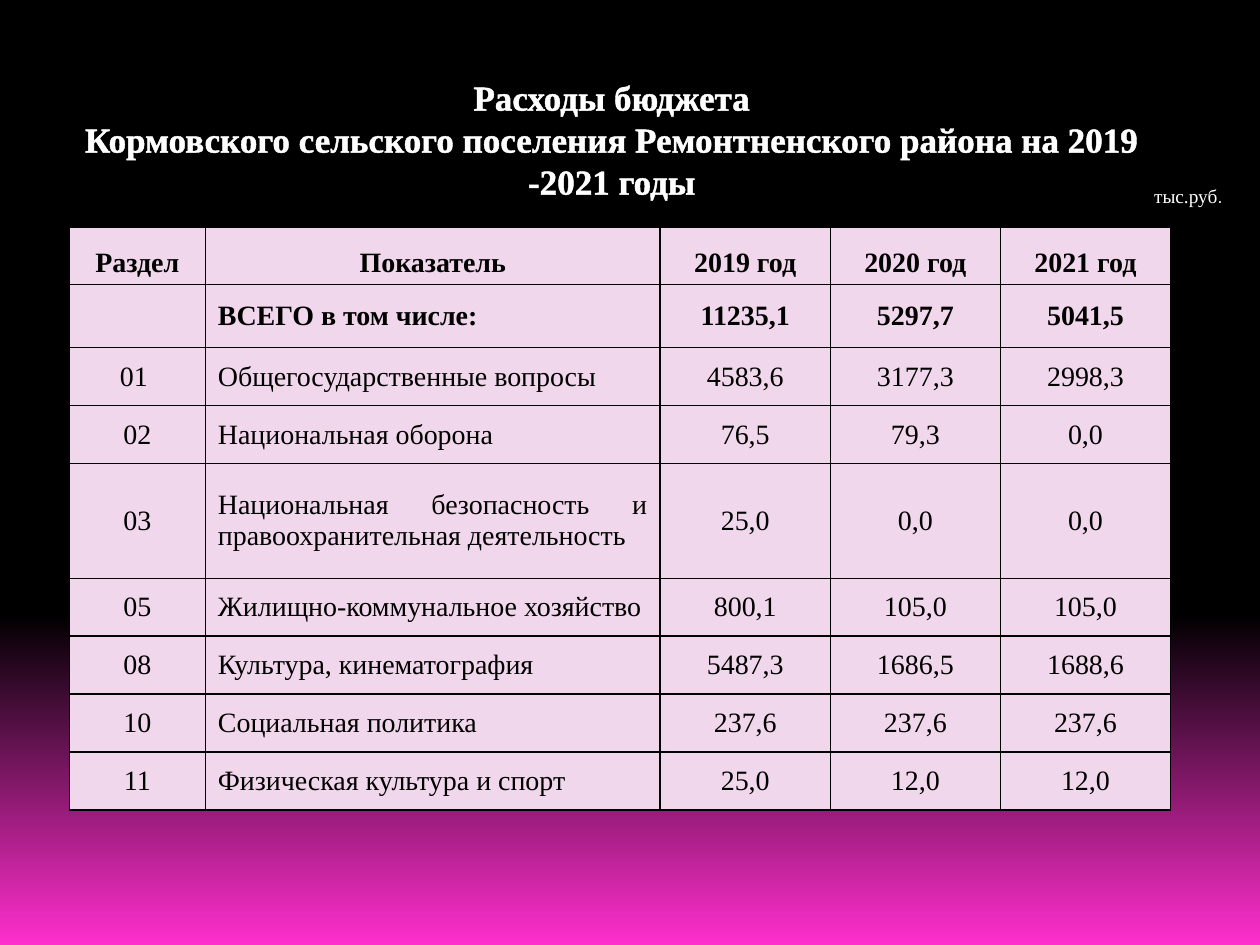
import copy
from dataclasses import dataclass

import pptx
import pptx.dml.color
import pptx.enum.text
import pptx.oxml
import pptx.oxml.ns
import pptx.util
from pptx.util import Inches

ALIGN = pptx.enum.text.PP_ALIGN
ANCHOR = pptx.enum.text.MSO_ANCHOR
FONT = "Times New Roman"
COLUMNS = (1.08, 3.61, 1.35, 1.35, 1.35)


@dataclass
class BudgetRow:
    section: str
    name: str
    values: tuple[str, str, str]
    height: float = 0.46
    bold: bool = False
    header: bool = False


ROWS = [
    BudgetRow("Раздел", "Показатель", ("2019 год", "2020 год", "2021 год"), bold=True, header=True),
    BudgetRow("", "ВСЕГО в том числе:", ("11235,1", "5297,7", "5041,5"), 0.5, bold=True),
    BudgetRow("01 ", "Общегосударственные вопросы", ("4583,6", "3177,3", "2998,3")),
    BudgetRow("02", "Национальная оборона", ("76,5", "79,3", "0,0")),
    BudgetRow("03", "Национальная безопасность и правоохранительная деятельность",
              ("25,0", "0,0", "0,0"), 0.91),
    BudgetRow("05", "Жилищно-коммунальное хозяйство", ("800,1", "105,0", "105,0")),
    BudgetRow("08", "Культура, кинематография", ("5487,3", "1686,5", "1688,6")),
    BudgetRow("10", "Социальная политика", ("237,6", "237,6", "237,6")),
    BudgetRow("11", "Физическая культура и спорт", ("25,0", "12,0", "12,0")),
]


def rgb(color: str) -> pptx.dml.color.RGBColor:
    return pptx.dml.color.RGBColor.from_string(color)


def line_xml(tag: str, color: str, width: float):
    return pptx.oxml.parse_xml(
        f'<a:{tag} {pptx.oxml.ns.nsdecls("a")} w="{pptx.util.Pt(width)}">'
        f'<a:solidFill><a:srgbClr val="{color}"/></a:solidFill></a:{tag}>')


def set_font(font, size: float, color: str, bold: bool = False, name: str = FONT) -> None:
    font.name, font.size, font.bold = name, pptx.util.Pt(size), bold
    font.color.rgb = rgb(color)


def set_background(s) -> None:
    fill = s.background.fill
    fill.gradient()
    fill.gradient_angle = 270
    first = s.element.find(".//" + pptx.oxml.ns.qn("a:gs"))
    first.addnext(copy.deepcopy(first))
    stops = ((0, "000000"), (0.65, "000000"), (1, "FF2FCD"))
    for stop, (position, color) in zip(fill.gradient_stops, stops):
        stop.position = position
        stop.color.rgb = rgb(color)


def fill_cell(cell, text: str, row: BudgetRow, col: int) -> None:
    for side in ("lnL", "lnR", "lnT", "lnB"):
        cell._tc.get_or_add_tcPr().append(line_xml(side, "000000", 1))
    cell.fill.solid()
    cell.fill.fore_color.rgb = rgb("F1D7EC")
    cell.vertical_anchor = ANCHOR.BOTTOM if row.header else ANCHOR.MIDDLE
    if col >= 2 and not row.header:
        cell.margin_left = cell.margin_right = Inches(0.07)
        cell.margin_top = cell.margin_bottom = 0
    p = cell.text_frame.paragraphs[0]
    p.text = text
    set_font(p.font, 16, "000000", row.bold)
    if col != 1 or row.header:
        p.alignment = ALIGN.CENTER
    else:
        p.alignment = ALIGN.LEFT if row.bold else ALIGN.JUSTIFY


def add_budget_table(s, rows: list[BudgetRow]) -> None:
    table = s.shapes.add_table(len(rows), len(COLUMNS), Inches(0.55), Inches(1.8),
                               Inches(sum(COLUMNS)), Inches(sum(r.height for r in rows))).table
    table.first_row = table.horz_banding = False
    for column, width in zip(table.columns, COLUMNS):
        column.width = Inches(width)
    for i, row in enumerate(rows):
        table.rows[i].height = Inches(row.height)
        for col, text in enumerate((row.section, row.name, *row.values)):
            fill_cell(table.cell(i, col), text, row, col)


def main() -> None:
    prs = pptx.Presentation()
    prs.slide_width, prs.slide_height = Inches(10), Inches(7.5)
    s = prs.slides.add_slide(prs.slide_layouts[5])
    set_background(s)

    # Title
    sp = s.shapes.title
    sp.left, sp.top, sp.width, sp.height = map(Inches, (0.23, 0.55, 9.25, 1.25))
    tf = sp.text_frame
    tf.auto_size = pptx.enum.text.MSO_AUTO_SIZE.NONE
    tf.vertical_anchor = ANCHOR.TOP
    tf.text = "Расходы бюджета\vКормовского сельского поселения Ремонтненского района на 2019 -2021 годы"
    p = tf.paragraphs[0]
    p.alignment = ALIGN.CENTER
    set_font(p.font, 20, "FFFFFF", True)
    for r in p.runs:
        set_font(r.font, 20, "FFFFFF", True)
        r.font._element.insert(0, line_xml("ln", "FFFFFF", 1))

    # Budget table
    add_budget_table(s, ROWS)

    # Unit of measure
    sp = s.shapes.add_textbox(Inches(8.07), Inches(1.41), Inches(1.73), Inches(0.29))
    tf = sp.text_frame
    tf.word_wrap = True
    p = tf.paragraphs[0]
    p.alignment = ALIGN.RIGHT
    for text, size, name in (("тыс.руб", 11, FONT), (".", 10, "Arial")):
        r = p.add_run()
        r.text = text
        set_font(r.font, size, "FFFFFF", name=name)

    prs.save("out.pptx")


if __name__ == "__main__":
    main()
